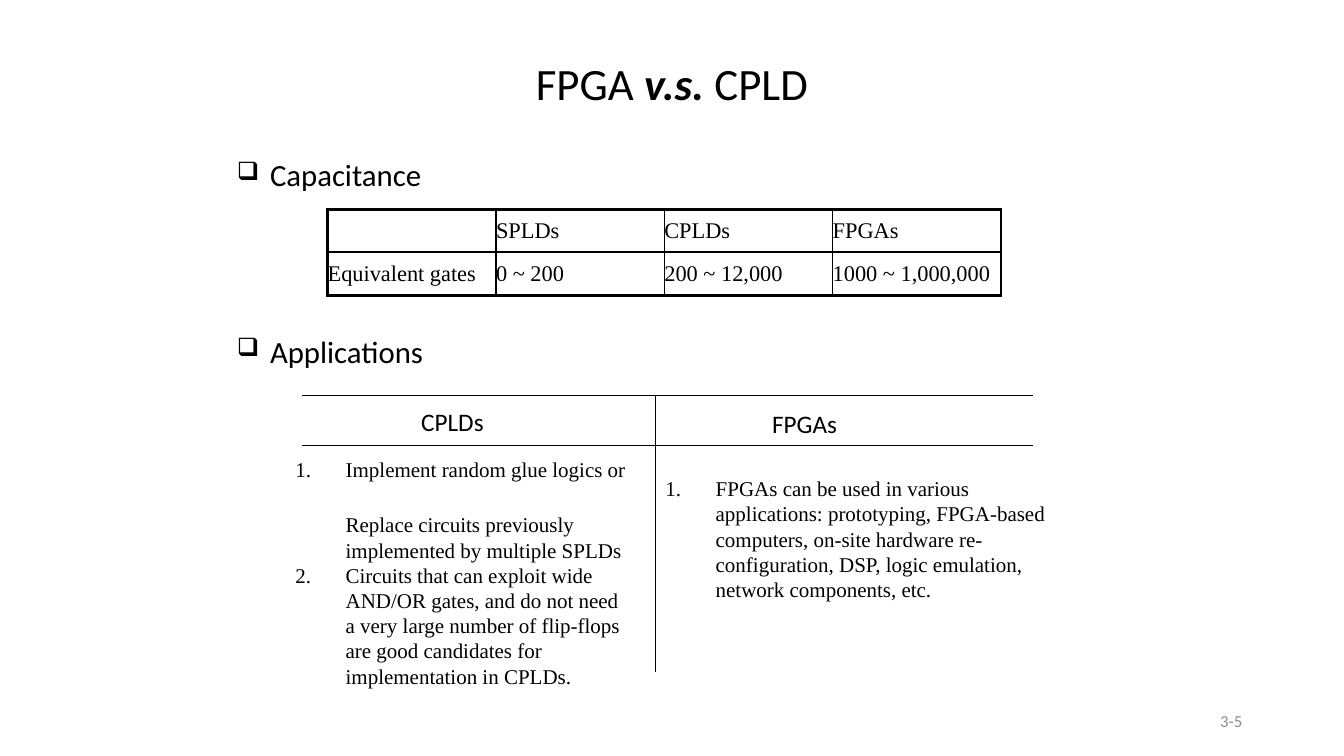
from dataclasses import dataclass

from lxml import etree
from pptx import Presentation
from pptx.dml.color import RGBColor
from pptx.enum.shapes import MSO_CONNECTOR
from pptx.enum.text import MSO_ANCHOR as Anchor, MSO_AUTO_SIZE as AutoSize, PP_ALIGN as Align
from pptx.oxml.ns import qn
from pptx.util import Inches, Pt

# Content
TITLE = [("FPGA ", False), ("v.s. ", True), ("CPLD", False)]
PAGE_NUMBER = "3-5"
HEADINGS = [("Capacitance", 1.5, 2.08), ("Applications", 3.25, 2.15)]  # text, top, width
GATES = [
    ["", "SPLDs", "CPLDs", "FPGAs"],
    ["Equivalent gates", "0 ~ 200", "200 ~ 12,000", "1000 ~ 1,000,000"],
]
COLUMN_TITLES = [("CPLDs", (4.08, 3.98, 0.83, 0.4)), ("FPGAs", (7.56, 4, 0.85, 0.4))]
CPLD_USES = [
    "Implement random glue logics or \vReplace circuits previously \v"
    "implemented by multiple SPLDs",
    "Circuits that can exploit wide \vAND/OR gates, and do not need \v"
    "a very large number of flip-flops \vare good candidates for \v"
    "implementation in CPLDs.",
]
FPGA_USES = [
    "FPGAs can be used in various applications: prototyping, FPGA-based computers, "
    "on-site hardware re-configuration, DSP, logic emulation, network components, etc.",
]
RULES = [(3, 3.92, 10.25, 3.92), (3, 4.42, 10.25, 4.42), (6.5, 3.92, 6.5, 6.67)]


@dataclass(frozen=True)
class Theme:
    sans: str = "Calibri"
    serif: str = "Times New Roman"
    ink: str = "000000"
    muted: str = "8C8C8C"
    title: float = 32
    heading: float = 22
    column: float = 18
    cell: float = 16
    body: float = 15
    page: float = 12
    frame_line: float = 2.25
    grid_line: float = 1
    rule: float = 0.75


THEME = Theme()

prs = Presentation()
prs.slide_width, prs.slide_height = Inches(13.33), Inches(7.5)
slide = prs.slides.add_slide(prs.slide_layouts[6])


def style(paragraph, size, face=THEME.sans, color=THEME.ink):
    for run in paragraph.runs:
        run.font.size = Pt(size)
        run.font.name = face
        run.font.color.rgb = RGBColor.from_string(color)


def add_text(lines, box, size, face=THEME.sans, color=THEME.ink, wrap=True,
             align=Align.LEFT, anchor=Anchor.TOP):
    frame = slide.shapes.add_textbox(*map(Inches, box)).text_frame
    frame.word_wrap = wrap
    frame.auto_size = AutoSize.SHAPE_TO_FIT_TEXT
    frame.vertical_anchor = anchor
    for i, line in enumerate(lines):
        paragraph = frame.paragraphs[0] if i == 0 else frame.add_paragraph()
        paragraph.text = line
        paragraph.alignment = align
        style(paragraph, size, face, color)
    return frame


def add_bullets(frame, indent, *marks):
    for paragraph in frame.paragraphs:
        props = paragraph._p.get_or_add_pPr()
        props.set("marL", str(Inches(indent)))
        props.set("indent", str(-Inches(indent)))
        for tag, name, value in marks:
            etree.SubElement(props, qn(tag)).set(name, value)


def set_border(cell, tag, width):
    line = etree.SubElement(cell._tc.get_or_add_tcPr(), qn(tag), w=str(Pt(width)))
    fill = etree.SubElement(line, qn("a:solidFill"))
    etree.SubElement(fill, qn("a:srgbClr"), val=THEME.ink)


# Title and page number
add_text([PAGE_NUMBER], (9.42, 6.95, 3, 0.4), THEME.page, color=THEME.muted,
         align=Align.RIGHT, anchor=Anchor.MIDDLE)
title = add_text([""], (2.25, 0.5, 8.83, 0.63), THEME.title, align=Align.CENTER).paragraphs[0]
for words, emphasis in TITLE:
    run = title.add_run()
    run.text = words
    run.font.bold = run.font.italic = emphasis
style(title, THEME.title)

# Section headings
for heading, top, width in HEADINGS:
    frame = add_text([heading], (2.25, top, width, 0.47), THEME.heading, wrap=False)
    add_bullets(frame, 0.33, ("a:buSzPct", "val", "82000"), ("a:buChar", "char", "❑"))

# Capacitance table
last_row, last_column = len(GATES) - 1, len(GATES[0]) - 1
table = slide.shapes.add_table(len(GATES), len(GATES[0]), Inches(3.25), Inches(2.08),
                               Inches(6.67), Inches(0.85)).table
table.first_row = table.horz_banding = False
for column in table.columns:
    column.width = Inches(1.67)
for row, height in zip(table.rows, (0.42, 0.43)):
    row.height = Inches(height)
for r, row in enumerate(GATES):
    for c, value in enumerate(row):
        cell = table.cell(r, c)
        cell.text = value
        cell.vertical_anchor = Anchor.MIDDLE
        cell.margin_left = cell.margin_right = cell.margin_top = cell.margin_bottom = 0
        style(cell.text_frame.paragraphs[0], THEME.cell, THEME.serif)
        edges = {"a:lnL": c == 0, "a:lnR": c == last_column,
                 "a:lnT": r == 0, "a:lnB": r == last_row}
        for tag, outer in edges.items():
            set_border(cell, tag, THEME.frame_line if outer else THEME.grid_line)
        cell.fill.background()

# Applications comparison
for x1, y1, x2, y2 in RULES:
    rule = slide.shapes.add_connector(MSO_CONNECTOR.STRAIGHT, *map(Inches, (x1, y1, x2, y2)))
    rule.line.color.rgb = RGBColor.from_string(THEME.ink)
    rule.line.width = Pt(THEME.rule)
    etree.SubElement(rule._element.spPr, qn("a:effectLst"))
for name, box in COLUMN_TITLES:
    add_text([name], box, THEME.column, wrap=False)
for uses, box, wrap in [(CPLD_USES, (2.83, 4.48, 3.52, 2.1), False),
                        (FPGA_USES, (6.5, 4.67, 4.08, 1.73), True)]:
    frame = add_text(uses, box, THEME.body, THEME.serif, wrap=wrap)
    add_bullets(frame, 0.5, ("a:buAutoNum", "type", "arabicPeriod"))

prs.save("out.pptx")
